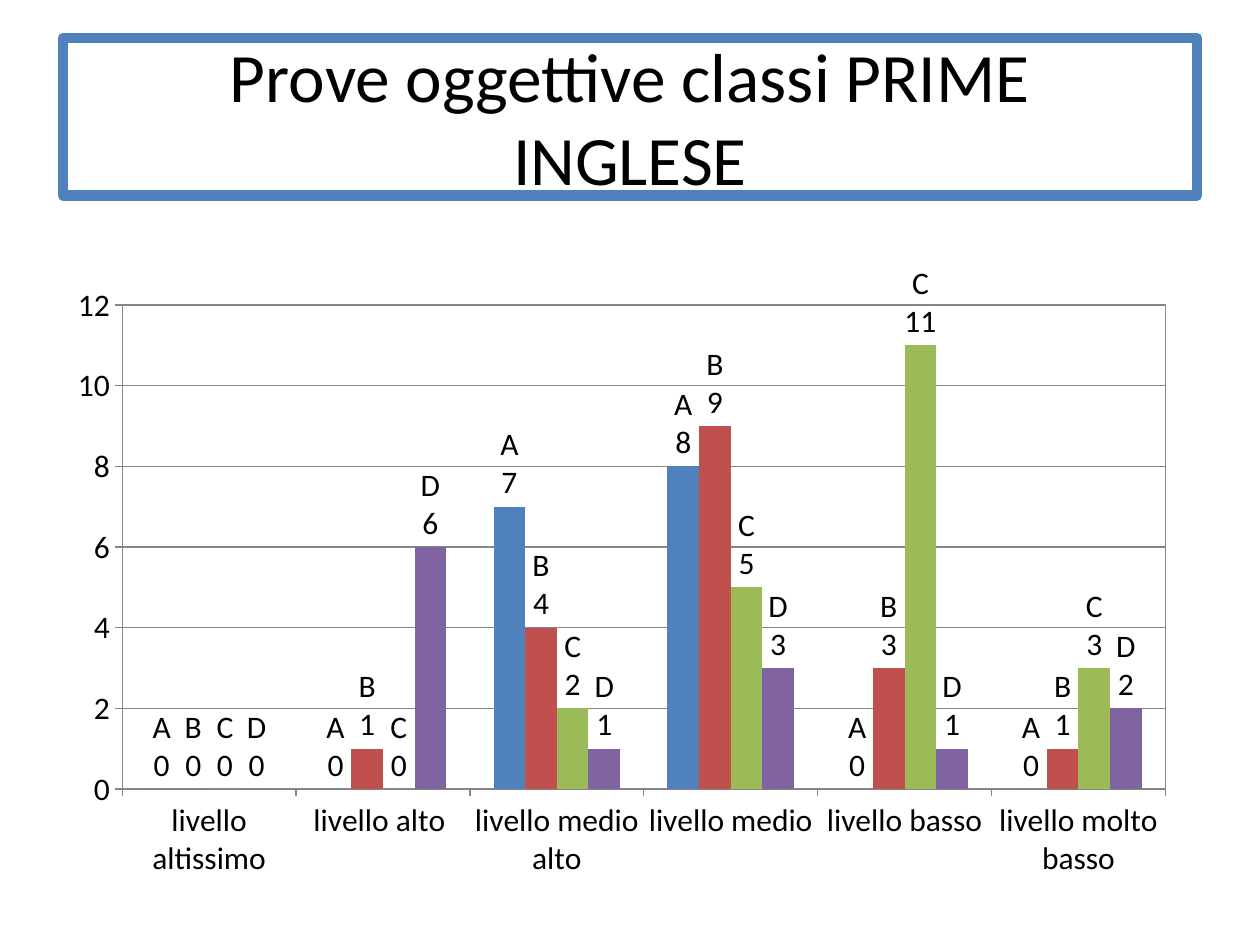
from dataclasses import dataclass

from lxml.etree import SubElement
from pptx import Presentation
from pptx.chart.data import CategoryChartData
from pptx.dml.color import RGBColor
from pptx.enum.chart import XL_CHART_TYPE, XL_LABEL_POSITION, XL_TICK_MARK
from pptx.enum.text import MSO_ANCHOR, MSO_AUTO_SIZE, PP_ALIGN
from pptx.oxml import parse_xml
from pptx.oxml.ns import nsdecls, qn
from pptx.util import Inches, Pt


@dataclass(frozen=True)
class Theme:
    font: str = "Calibri"
    text: RGBColor = RGBColor.from_string("000000")
    frame: RGBColor = RGBColor.from_string("4F81BD")
    grid: RGBColor = RGBColor.from_string("868686")
    title_size: Pt = Pt(39.6)
    chart_size: Pt = Pt(18)
    frame_width: Pt = Pt(6)
    grid_width: Pt = Pt(0.75)


THEME = Theme()

LEVELS = ["livello altissimo", "livello alto ", "livello medio alto",
          "livello medio", "livello basso", "livello molto basso"]

# Class section: bar colour and number of pupils at each level
SECTIONS = {
    "A": ("4F81BD", [0, 0, 7, 8, 0, 0]),
    "B": ("C0504D", [0, 1, 4, 9, 3, 1]),
    "C": ("9BBB59", [0, 0, 2, 5, 11, 3]),
    "D": ("8064A2", [0, 6, 1, 3, 1, 2]),
}


def style_font(font, size):
    font.name = THEME.font
    font.size = size
    font.bold = False
    font.color.rgb = THEME.text


def style_line(line, color, width):
    line.color.rgb = color
    line.width = width


def add_title(slide, text):
    title = slide.shapes.title
    title.left, title.top = Inches(0.5), Inches(0.3)
    title.width, title.height = Inches(9), Inches(1.25)
    style_line(title.line, THEME.frame, THEME.frame_width)
    SubElement(title.line._ln, qn("a:round"))
    frame = title.text_frame
    frame.text = text
    frame.word_wrap = True
    frame.auto_size = MSO_AUTO_SIZE.NONE
    frame.vertical_anchor = MSO_ANCHOR.MIDDLE
    paragraph = frame.paragraphs[0]
    paragraph.alignment = PP_ALIGN.CENTER
    style_font(paragraph.font, THEME.title_size)


def set_plot_area(chart, x, y, w, h):
    """Place the inner plot area by fractions of the chart and outline it."""
    plot_area = chart._chartSpace.chart.plotArea
    for layout in plot_area.findall(qn("c:layout")):
        plot_area.remove(layout)
    sizes = "".join(f'<c:{tag} val="{value}"/>'
                    for tag, value in zip("xywh", (x, y, w, h)))
    plot_area.insert(0, parse_xml(
        f'<c:layout {nsdecls("c")}><c:manualLayout><c:layoutTarget val="inner"/>'
        f'<c:xMode val="edge"/><c:yMode val="edge"/>{sizes}'
        '</c:manualLayout></c:layout>'))
    plot_area.append(parse_xml(
        f'<c:spPr {nsdecls("c", "a")}><a:noFill/><a:ln w="{THEME.grid_width}">'
        f'<a:solidFill><a:srgbClr val="{THEME.grid}"/></a:solidFill></a:ln></c:spPr>'))


def style_section(series, color):
    series.format.fill.solid()
    series.format.fill.fore_color.rgb = RGBColor.from_string(color)
    series.invert_if_negative = False
    labels = series.data_labels
    labels.show_value = True
    labels.show_series_name = True
    labels.position = XL_LABEL_POSITION.OUTSIDE_END
    style_font(labels.font, THEME.chart_size)
    # Section name above its value
    separator = parse_xml(f'<c:separator {nsdecls("c")}>\n</c:separator>')
    labels._element.find(qn("c:showBubbleSize")).addnext(separator)


def add_results_chart(slide):
    data = CategoryChartData()
    data.categories = LEVELS
    for section, (_, pupils) in SECTIONS.items():
        data.add_series(section, pupils)
    chart = slide.shapes.add_chart(
        XL_CHART_TYPE.COLUMN_CLUSTERED, Inches(0.43), Inches(2.1),
        Inches(9), Inches(4.95), data).chart
    chart.has_title = False
    chart.has_legend = False
    style_font(chart.font, THEME.chart_size)
    set_plot_area(chart, 0.06, 0.06, 0.92, 0.78)

    # Bars
    plot = chart.plots[0]
    plot.gap_width = 150
    plot.overlap = 0
    plot.vary_by_categories = False
    for series, (color, _) in zip(plot.series, SECTIONS.values()):
        style_section(series, color)

    # Axes
    for axis in (chart.category_axis, chart.value_axis):
        axis.major_tick_mark = XL_TICK_MARK.OUTSIDE
        style_line(axis.format.line, THEME.grid, THEME.grid_width)
        style_font(axis.tick_labels.font, THEME.chart_size)
    counts = chart.value_axis
    counts.minimum_scale, counts.maximum_scale, counts.major_unit = 0, 12, 2
    counts.has_major_gridlines = True
    style_line(counts.major_gridlines.format.line, THEME.grid, THEME.grid_width)


def main():
    deck = Presentation()
    deck.slide_width, deck.slide_height = Inches(10), Inches(7.5)
    slide = deck.slides.add_slide(deck.slide_layouts[5])
    add_title(slide, "Prove oggettive classi PRIME\vINGLESE")
    add_results_chart(slide)
    deck.save("out.pptx")


if __name__ == "__main__":
    main()
